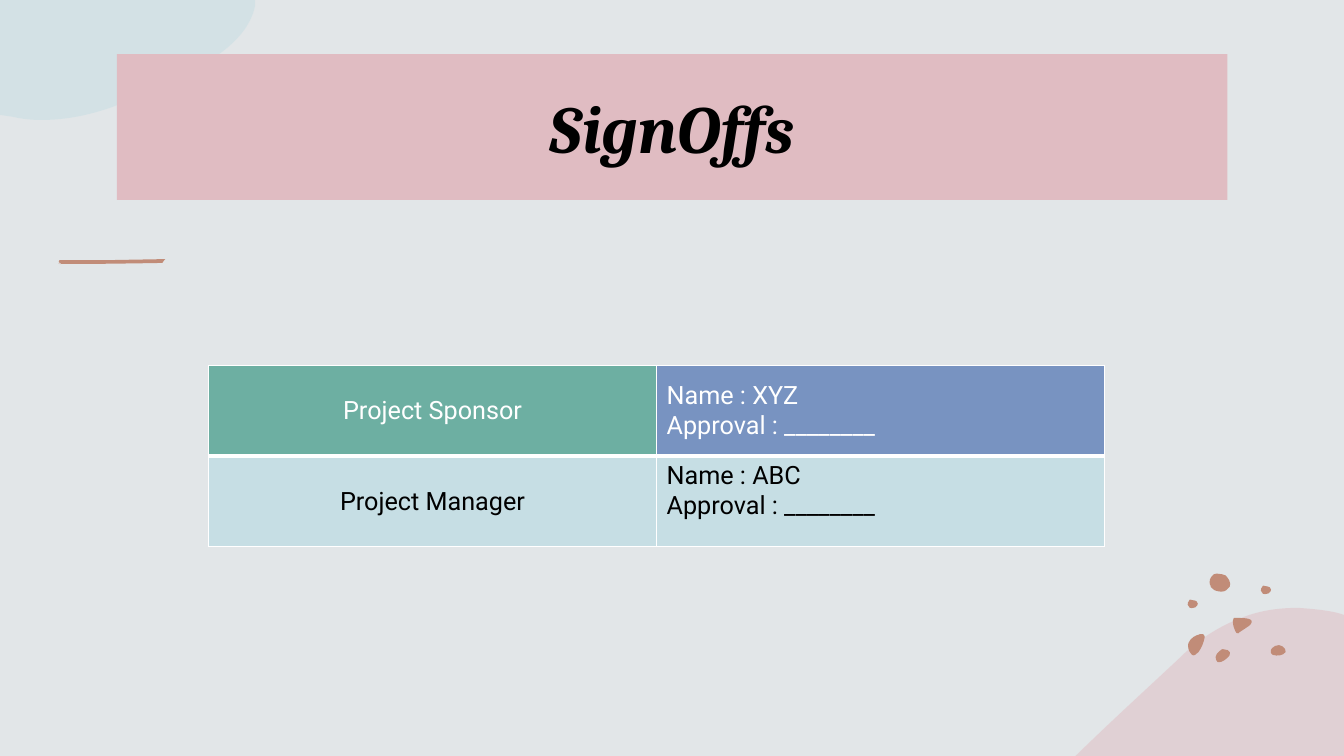
from lxml import etree
from pptx import Presentation
from pptx.dml.color import RGBColor
from pptx.enum.shapes import MSO_SHAPE
from pptx.enum.text import MSO_ANCHOR, PP_ALIGN
from pptx.oxml.ns import qn
from pptx.util import Pt

RECTANGLE = MSO_SHAPE.RECTANGLE
MIDDLE, TOP = MSO_ANCHOR.MIDDLE, MSO_ANCHOR.TOP
CENTER, LEFT = PP_ALIGN.CENTER, PP_ALIGN.LEFT

COLORS = {
    "background": "E2E6E8", "pink": "E0BCC2", "clay": "C18C78",
    "mist": "C6DEE4", "green": "6DAFA2", "blue": "7893C1",
    "white": "FFFFFF", "black": "000000",
}


def add_outline(page, start, segments, color, opacity=100, shift=(0, 0)):
    dx, dy = shift
    ends = [(Pt(s[-2] + dx), Pt(s[-1] + dy)) for s in segments]
    builder = page.shapes.build_freeform(Pt(start[0] + dx), Pt(start[1] + dy))
    builder.add_line_segments(ends, close=True)
    outline = builder.convert_to_shape()
    lines = list(outline._element.iter(qn("a:lnTo")))
    for line, segment in zip(lines, segments):
        if len(segment) == 6:
            curve = etree.Element(qn("a:cubicBezTo"))
            for x, y in zip(segment[::2], segment[1::2]):
                etree.SubElement(curve, qn("a:pt"), x=str(Pt(x + dx) - outline.left),
                                 y=str(Pt(y + dy) - outline.top))
            line.getparent().replace(line, curve)
    outline.shadow.inherit = False
    outline.line.fill.background()
    outline.fill.solid()
    outline.fill.fore_color.rgb = RGBColor.from_string(COLORS[color])
    if opacity < 100:
        tint = outline._element.spPr.find(qn("a:solidFill"))[0]
        etree.SubElement(tint, qn("a:alpha"), val=str(opacity * 1000))


def add_span(para, text, font, size, color):
    span = para.add_run()
    span.text = text
    span.font.name = font
    span.font.size = Pt(size)
    span.font.color.rgb = RGBColor.from_string(COLORS[color])
    return span


deck = Presentation()
deck.slide_width, deck.slide_height = Pt(960), Pt(540)
page = deck.slides.add_slide(deck.slide_layouts[6])
page.background.fill.solid()
page.background.fill.fore_color.rgb = RGBColor.from_string(COLORS["background"])

add_outline(page, (927.4, 434.2), [
    (936.7, 434.9, 946.1, 435.6, 955.4, 437.8),
    (960, 439.2), (960, 540), (768.2, 540), (769, 539.3),
    (793.4, 515.5, 818.6, 492.5, 841.7, 470.9),
    (857.5, 455, 874.1, 445.7, 890.6, 439.9),
    (902.9, 435.6, 915.1, 434.2, 927.4, 434.2),
], "pink", opacity=50)

pebbles = [
    ((873.4, 463.7), [
        (874.8, 463.7, 875.5, 463.7, 877, 464.4),
        (878.4, 465.1, 879.1, 466.6, 878.4, 468),
        (877, 470.2, 872.6, 473.8, 869.8, 473),
        (869, 472.3, 868.3, 470.9, 868.3, 469.4),
        (868.3, 468, 869.8, 465.8, 871.2, 465.1),
        (871.9, 464.4, 872.6, 463.7, 873.4, 463.7)]),
    ((857.5, 452.9), [
        (859, 452.9, 860.4, 452.9, 860.4, 454.3),
        (860.4, 455, 860.4, 455, 860.4, 455.8),
        (859.7, 459.4, 858.2, 463, 856.1, 465.8),
        (854.6, 467.3, 852.5, 469.4, 851, 467.3),
        (848.9, 465.1, 848.2, 461.5, 848.9, 459.4),
        (849.6, 457.2, 851, 456.5, 852.5, 455),
        (853.2, 455, 855.4, 452.9, 857.5, 452.9)]),
    ((913.7, 460.8), [
        (915.1, 460.8, 917.3, 462.2, 918, 463.7),
        (918.7, 465.1, 918.7, 466.6, 916.6, 467.3),
        (914.4, 468.7, 908.6, 468.7, 907.9, 466.6),
        (907.2, 465.1, 907.9, 463.7, 908.6, 463),
        (910.1, 461.5, 911.5, 460.8, 913.7, 460.8)]),
    ((864.7, 418.3), [
        (864, 418.3, 863.3, 414, 865.4, 411.8),
        (866.9, 410.4, 866.9, 409.7, 869, 409.7),
        (871.2, 409.7, 874.1, 410.4, 875.5, 411.1),
        (877, 412.6, 879.8, 416.2, 878.4, 419),
        (876.2, 421.2, 875.5, 422.6, 872.6, 422.6),
        (870.5, 422.6, 866.9, 421.9, 866.2, 420.5),
        (864.7, 419.8, 864.7, 419, 864.7, 418.3)]),
    ((884.2, 441.4), [
        (888.5, 441.4, 896.4, 441.4, 893.5, 445.7),
        (893.5, 446.4, 892.8, 447.1, 892.1, 447.1),
        (889.9, 448.6, 887.8, 450, 885.6, 451.4),
        (884.9, 452.2, 884.2, 452.9, 883.4, 452.2),
        (883.4, 452.2, 882.7, 451.4, 882.7, 451.4),
        (881.3, 448.6, 880.6, 446.4, 880.6, 443.5),
        (880.6, 442.8, 880.6, 442.1, 881.3, 441.4)]),
]
for start, segments in pebbles:
    add_outline(page, start, segments, "clay")

small_pebble = [
    (900.7, 421.9, 900.7, 419, 902.2, 418.3),
    (903.6, 418.3, 904.3, 418.3, 905.8, 419),
    (906.5, 419, 907.9, 419.8, 907.9, 421.2),
    (907.9, 421.9, 907.2, 423.4, 906.5, 423.4),
    (906.5, 423.4, 906.5, 424.1, 905, 424.1),
    (904.3, 424.1, 902.9, 424.8, 902.2, 424.1),
    (901.4, 422.6, 900.7, 422.6, 900.7, 421.9),
]
for shift in [(0, 0), (-52.3, 10)]:
    add_outline(page, (900.7, 421.9), small_pebble, "clay", shift=shift)

add_outline(page, (0, 0), [
    (182.2, 0), (182.2, 4.3),
    (176.4, 31.7, 144, 48.2, 113.8, 61.9),
    (88.6, 74.2, 61.9, 85.7, 29.5, 85.7),
    (22.3, 85.7, 15.8, 85, 9.4, 83.5), (0, 82.1),
], "mist", opacity=50)

for x, y, width in [(41.8, 188.4, 0.9), (43.1, 188.5, 0.3), (117.6, 185.2, 0.3)]:
    add_outline(page, (x, y), [(x + width, y), (x + width, y + 0.2)], "clay")
add_outline(page, (42.5, 185.8), [
    (80, 185.8), (113, 185.2), (118, 185.2), (117.4, 185.8),
    (115.9, 187.9), (112.7, 187.9), (96, 188.2), (62, 188.6),
    (43.9, 188.6), (41.9, 187.2),
], "clay")

title_box = page.shapes.add_shape(RECTANGLE, Pt(83.5), Pt(38.6), Pt(793.2), Pt(104.2))
title_box.shadow.inherit = False
title_box.line.fill.background()
title_box.fill.solid()
title_box.fill.fore_color.rgb = RGBColor.from_string(COLORS["pink"])
title_box.text_frame.word_wrap = True
title_box.text_frame.vertical_anchor = MIDDLE
title_para = title_box.text_frame.paragraphs[0]
title_para.alignment = CENTER
title_span = add_span(title_para, "SignOffs", "Cambria", 48, "black")
title_span.font.bold = True
title_span.font.italic = True

signoffs = [
    [(["Project Sponsor"], "green", "white", CENTER, MIDDLE),
     (["Name : XYZ", "Approval : ________"], "blue", "white", LEFT, MIDDLE)],
    [(["Project Manager"], "mist", "black", CENTER, MIDDLE),
     (["Name : ABC", "Approval : ________"], "mist", "black", LEFT, TOP)],
]
table = page.shapes.add_table(2, 2, Pt(149), Pt(261), Pt(640), Pt(129.6)).table
table.horz_banding = False
for row, entries in enumerate(signoffs):
    for column, (lines, fill, color, alignment, anchor) in enumerate(entries):
        cell = table.cell(row, column)
        cell.vertical_anchor = anchor
        for side in ("a:lnL", "a:lnR", "a:lnT", "a:lnB"):
            weight = Pt(3 if row == 0 and side == "a:lnB" else 1)
            border = etree.SubElement(cell._tc.get_or_add_tcPr(), qn(side), w=str(weight))
            paint = etree.SubElement(border, qn("a:solidFill"))
            etree.SubElement(paint, qn("a:srgbClr"), val=COLORS["white"])
        cell.fill.solid()
        cell.fill.fore_color.rgb = RGBColor.from_string(COLORS[fill])
        for number, line in enumerate(lines):
            frame = cell.text_frame
            para = frame.add_paragraph() if number else frame.paragraphs[0]
            para.alignment = alignment
            add_span(para, line, "Roboto", 18, color).font.bold = False

deck.save("out.pptx")
